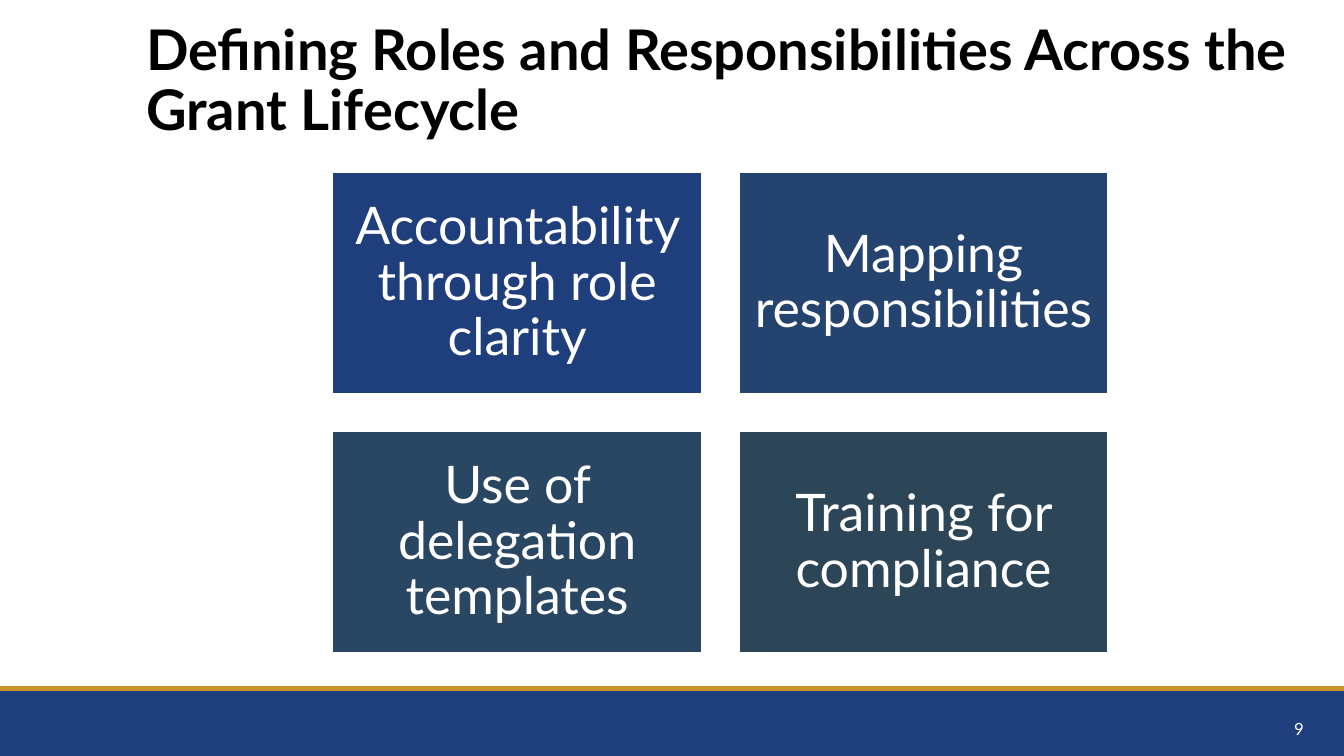
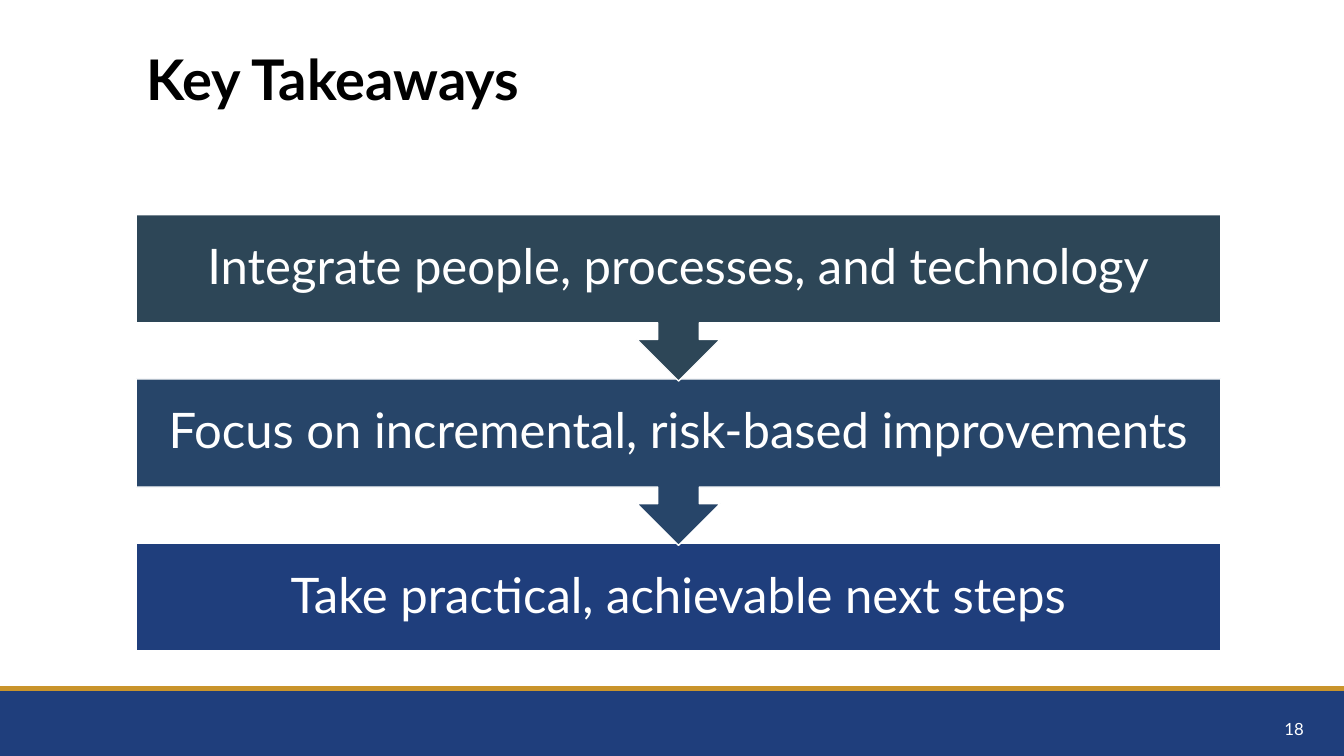
"""Build two slides on grant roles and key takeaways with shared title and footer."""
from pptx import Presentation
from pptx.dml.color import RGBColor
from pptx.enum.shapes import MSO_CONNECTOR, MSO_SHAPE
from pptx.enum.text import MSO_ANCHOR, PP_ALIGN
from pptx.oxml.ns import qn
from pptx.util import Inches, Pt
from lxml.etree import SubElement

FONT = "Lato"
NAVY = RGBColor(0x1F, 0x3E, 0x7C)
GOLD = RGBColor(0xC9, 0x94, 0x2B)
BLACK = RGBColor(0x00, 0x00, 0x00)
WHITE = RGBColor(0xFF, 0xFF, 0xFF)
BLUE = RGBColor(0x24, 0x44, 0x6F)
MID_BLUE = RGBColor(0x27, 0x45, 0x69)
STEEL = RGBColor(0x29, 0x46, 0x63)
SLATE = RGBColor(0x2D, 0x46, 0x57)
WIDTH, HEIGHT = 13.33, 7.5
BAND_TOP = 6.83


def set_text(shape, text, size, color=WHITE, align=PP_ALIGN.CENTER, spacing=0.9, inset=None, bold=False):
    frame = shape.text_frame
    frame.text = text
    frame.word_wrap = True
    frame.vertical_anchor = MSO_ANCHOR.MIDDLE
    if inset is not None:
        frame.margin_left = frame.margin_right = Inches(inset)
        frame.margin_top = frame.margin_bottom = Inches(inset)
    para = frame.paragraphs[0]
    para.alignment = align
    para.line_spacing = spacing
    font = para.runs[0].font
    font.name, font.size, font.bold = FONT, Pt(size), bold
    font.color.rgb = color


def add_block(page, kind, left, top, width, height, fill, outlined=True):
    block = page.shapes.add_shape(kind, Inches(left), Inches(top), Inches(width), Inches(height))
    block.shadow.inherit = False
    block.fill.solid()
    block.fill.fore_color.rgb = fill
    if outlined:
        block.line.color.rgb = WHITE
        block.line.width = Pt(1)
    else:
        block.line.fill.background()
    return block


deck = Presentation()
deck.slide_width, deck.slide_height = Inches(WIDTH), Inches(HEIGHT)

pages = []
for title, number in [("Defining Roles and Responsibilities Across the Grant Lifecycle", "9"),
                      ("Key Takeaways", "18")]:
    page = deck.slides.add_slide(deck.slide_layouts[6])
    pages.append(page)
    add_block(page, MSO_SHAPE.RECTANGLE, 0, BAND_TOP, WIDTH, HEIGHT - BAND_TOP, NAVY, outlined=False)
    rule = page.shapes.add_connector(MSO_CONNECTOR.STRAIGHT, 0, Inches(BAND_TOP), Inches(WIDTH), Inches(BAND_TOP))
    rule.line.color.rgb = GOLD
    rule.line.width = Pt(3)
    SubElement(rule._element.spPr, qn("a:effectLst"))
    title_box = page.shapes.add_textbox(Inches(1.35), Inches(0.41), Inches(11.68), Inches(0.81))
    set_text(title_box, title, 40, BLACK, PP_ALIGN.LEFT, bold=True)
    number_box = page.shapes.add_textbox(Inches(10.03), Inches(7.03), Inches(3), Inches(0.4))
    set_text(number_box, number, 12, align=PP_ALIGN.RIGHT, spacing=1.0)

roles_page, takeaways_page = pages

CARD_WIDTH, CARD_HEIGHT, CARD_GAP = 3.66, 2.2, 0.37
cards = [("Accountability through role clarity", NAVY), ("Mapping responsibilities", BLUE),
         ("Use of delegation templates", STEEL), ("Training for compliance", SLATE)]
for index, (text, fill) in enumerate(cards):
    row, column = divmod(index, 2)
    card = add_block(roles_page, MSO_SHAPE.RECTANGLE, 3.3 + column * (CARD_WIDTH + CARD_GAP),
                     1.71 + row * (CARD_HEIGHT + CARD_GAP), CARD_WIDTH, CARD_HEIGHT, fill)
    set_text(card, text, 37, inset=0.15)

STEP_TOP, STEP_PITCH = 2.13, 1.63
steps = [("Take practical, achievable next steps", NAVY, MSO_SHAPE.RECTANGLE, 1.07),
         ("Focus on incremental, risk-based improvements", MID_BLUE, MSO_SHAPE.DOWN_ARROW_CALLOUT, 1.65),
         ("Integrate people, processes, and technology", SLATE, MSO_SHAPE.DOWN_ARROW_CALLOUT, 1.65)]
for index, (text, fill, kind, height) in enumerate(steps):
    top = STEP_TOP + (len(steps) - 1 - index) * STEP_PITCH
    step = add_block(takeaways_page, kind, 1.35, top, 10.76, height, fill)
    set_text(step, text, 35, inset=0.27)

deck.save("out.pptx")
